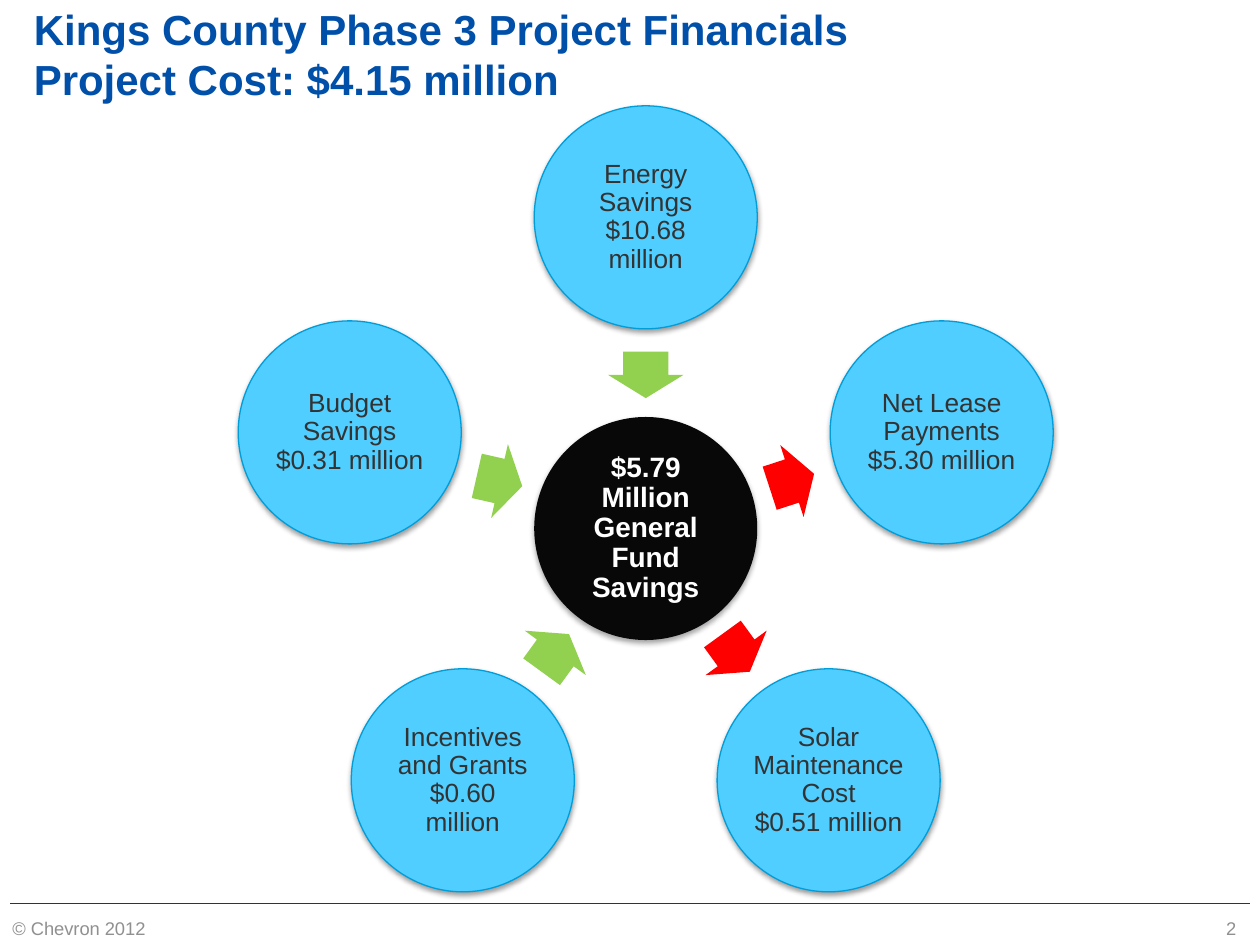
import math

import lxml.etree
import pptx
import pptx.dml.color
import pptx.enum.shapes
import pptx.enum.text
import pptx.oxml.ns
import pptx.util

Inches = pptx.util.Inches
Pt = pptx.util.Pt
RGBColor = pptx.dml.color.RGBColor
Shapes = pptx.enum.shapes.MSO_SHAPE
Align = pptx.enum.text.PP_ALIGN
Anchor = pptx.enum.text.MSO_ANCHOR
qn = pptx.oxml.ns.qn

BLUE = RGBColor(0x00, 0x50, 0xAA)
SKY = RGBColor(0x4F, 0xCE, 0xFF)
RIM = RGBColor(0x00, 0x9D, 0xD9)
BLACK = RGBColor(0x08, 0x08, 0x08)
WHITE = RGBColor(0xFF, 0xFF, 0xFF)
DARK = RGBColor(0x33, 0x33, 0x33)
GRAY = RGBColor(0x90, 0x90, 0x90)
GREEN = RGBColor(0x92, 0xD0, 0x50)
RED = RGBColor(0xFF, 0x00, 0x00)

# Wheel geometry, in inches
CENTER_X, CENTER_Y = 5.125, 4.195
CIRCLE_SIZE = 1.77
CIRCLE_RADIUS, ARROW_RADIUS = 2.47, 1.22
ARROW_WIDTH, ARROW_HEIGHT = 0.37, 0.6

# Clockwise from the top: label, arrow colour, arrow rotation
ITEMS = [
    ("Energy Savings\v$10.68 million", GREEN, 90),
    ("Net Lease Payments\v$5.30 million", RED, 342),
    ("Solar Maintenance Cost\v$0.51 million", RED, 54),
    ("Incentives and Grants\v$0.60\vmillion", GREEN, 306),
    ("Budget Savings\v$0.31 million", GREEN, 12.8),
]

TITLE_FORMAT = {"size": Pt(24), "bold": True}
HUB_FORMAT = {"size": Pt(16), "bold": True}
LABEL_FORMAT = {"size": Pt(15)}
FOOTER_FORMAT = {"size": Pt(10.5)}


def write_text(box, text, color, font_format, align=Align.LEFT):
    frame = box.text_frame
    frame.word_wrap = True
    frame.vertical_anchor = Anchor.MIDDLE
    para = frame.paragraphs[0]
    para.text = text
    para.alignment = align
    for span in para.runs:
        span.font.name = "Arial"
        span.font.color.rgb = color
        for name, value in font_format.items():
            setattr(span.font, name, value)
    return para


def add_text(page, area, text, color, font_format, align=Align.LEFT):
    box = page.shapes.add_textbox(*map(Inches, area))
    write_text(box, text, color, font_format, align)


def set_shadow(shape, opacity, blur, distance, angle):
    properties = shape._element.spPr
    for old in properties.findall(qn("a:effectLst")):
        properties.remove(old)
    effects = lxml.etree.SubElement(properties, qn("a:effectLst"))
    shadow = lxml.etree.SubElement(
        effects, qn("a:outerShdw"), blurRad=str(Pt(blur)), dist=str(Pt(distance)),
        dir=str(angle * 60000), rotWithShape="0")
    color = lxml.etree.SubElement(shadow, qn("a:srgbClr"), val="000000")
    lxml.etree.SubElement(color, qn("a:alpha"), val=str(opacity * 1000))


def add_centered(page, kind, x, y, width, height, fill):
    shape = page.shapes.add_shape(
        kind, Inches(x - width / 2), Inches(y - height / 2),
        Inches(width), Inches(height))
    shape.shadow.inherit = False
    shape.fill.solid()
    shape.fill.fore_color.rgb = fill
    shape.line.fill.background()
    return shape


def add_circle(page, x, y, text, fill, color, font_format, shadow, rim=None):
    circle = add_centered(page, Shapes.OVAL, x, y, CIRCLE_SIZE, CIRCLE_SIZE, fill)
    if rim is not None:
        circle.line.color.rgb = rim
        circle.line.width = Pt(0.75)
    set_shadow(circle, *shadow)
    for side in ("left", "top", "right", "bottom"):
        setattr(circle.text_frame, f"margin_{side}", Inches(0.02))
    para = write_text(circle, text, color, font_format, Align.CENTER)
    para.line_spacing = 0.9


def add_arrow(page, x, y, fill, rotation):
    arrow = add_centered(page, Shapes.RIGHT_ARROW, x, y, ARROW_WIDTH, ARROW_HEIGHT, fill)
    arrow.adjustments[0] = 0.6
    arrow.adjustments[1] = 0.5
    arrow.rotation = rotation


def add_footer(page):
    rule = page.shapes.add_connector(
        pptx.enum.shapes.MSO_CONNECTOR.STRAIGHT,
        Inches(0.08), Inches(7.17), Inches(9.92), Inches(7.17))
    rule.line.color.rgb = DARK
    rule.line.width = Pt(0.75)
    set_shadow(rule, 40, 4, 3, 45)
    add_text(page, (7.58, 7.17, 2.33, 0.4), "2", GRAY, FOOTER_FORMAT, Align.RIGHT)
    add_text(page, (0, 7.17, 3.33, 0.4), "© Chevron 2012", GRAY, FOOTER_FORMAT)


def add_wheel(page):
    # Hub
    add_circle(page, CENTER_X, CENTER_Y, "$5.79 Million General Fund Savings",
               BLACK, WHITE, HUB_FORMAT, (35, 3.1, 1.8, 90))
    # Arrows and outer circles, evenly spaced around the hub
    for index, (label, arrow_color, rotation) in enumerate(ITEMS):
        angle = math.radians(360 / len(ITEMS) * index - 90)
        across, down = math.cos(angle), math.sin(angle)
        add_arrow(page, CENTER_X + ARROW_RADIUS * across,
                  CENTER_Y + ARROW_RADIUS * down, arrow_color, rotation)
        add_circle(page, CENTER_X + CIRCLE_RADIUS * across,
                   CENTER_Y + CIRCLE_RADIUS * down, label,
                   SKY, DARK, LABEL_FORMAT, (38, 3.1, 1.6, 90), RIM)


def main():
    deck = pptx.Presentation()
    deck.slide_width, deck.slide_height = Inches(10), Inches(7.5)
    page = deck.slides.add_slide(deck.slide_layouts[6])
    add_footer(page)
    add_text(page, (0.17, 0.1, 8.33, 0.65),
             "Kings County Phase 3 Project Financials\vProject Cost: $4.15 million",
             BLUE, TITLE_FORMAT)
    add_wheel(page)
    deck.save("out.pptx")


if __name__ == "__main__":
    main()
